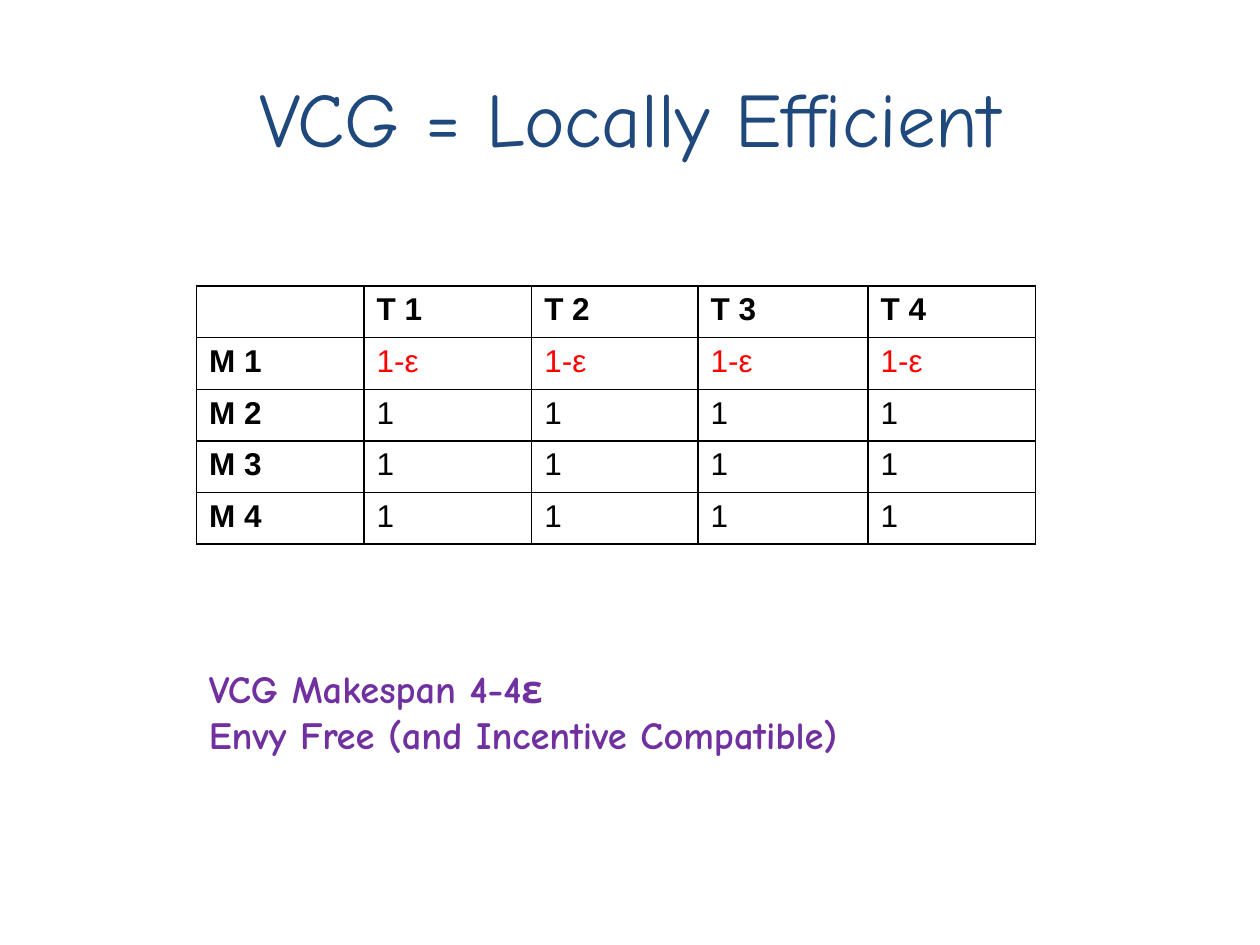
"""Build the slide on VCG as a locally efficient mechanism."""
from lxml import etree
from pptx import Presentation
from pptx.dml.color import RGBColor
from pptx.enum.text import MSO_ANCHOR, PP_ALIGN
from pptx.oxml.ns import qn
from pptx.util import Inches, Pt

CENTER, LEFT = PP_ALIGN.CENTER, PP_ALIGN.LEFT
MIDDLE = MSO_ANCHOR.MIDDLE
NAVY = RGBColor(0x1F, 0x49, 0x7D)
PURPLE = RGBColor(0x70, 0x30, 0xA0)
RED = RGBColor(0xFF, 0x00, 0x00)
BLACK = RGBColor(0x00, 0x00, 0x00)
HEADING_FONT, TABLE_FONT = "Comic Neue", "Arial"

TITLE = "VCG = Locally Efficient"
TASKS = ["T 1", "T 2", "T 3", "T 4"]
MACHINES = {"M 1": "1-ε", "M 2": "1", "M 3": "1", "M 4": "1"}
CHOSEN = "M 1"
CONCLUSIONS = ["VCG Makespan 4-4ε", "Envy Free (and Incentive Compatible)"]
COLUMN_WIDTHS = [1.33, 1.33, 1.32, 1.35, 1.33]
ROW_HEIGHT = 0.41


def write(frame, lines, font, size, color, bold=False, align=LEFT):
    for index, line in enumerate(lines):
        para = frame.paragraphs[0] if index == 0 else frame.add_paragraph()
        para.alignment = align
        span = para.add_run()
        span.text = line
        span.font.name = font
        span.font.size = Pt(size)
        span.font.bold = bold
        span.font.color.rgb = color


def outline(cell):
    properties = cell._tc.get_or_add_tcPr()
    for index, side in enumerate(("a:lnL", "a:lnR", "a:lnT", "a:lnB")):
        line = etree.Element(qn(side), w=str(Pt(1)))
        fill = etree.SubElement(line, qn("a:solidFill"))
        etree.SubElement(fill, qn("a:srgbClr"), val=str(BLACK))
        properties.insert(index, line)


def add_cost_table(page):
    rows = [[""] + TASKS]
    rows += [[machine] + [cost] * len(TASKS) for machine, cost in MACHINES.items()]
    frame = page.shapes.add_table(
        len(rows), len(COLUMN_WIDTHS), Inches(1.56), Inches(2.27),
        Inches(sum(COLUMN_WIDTHS)), Inches(ROW_HEIGHT * len(rows)))
    table = frame.table
    for column, width in zip(table.columns, COLUMN_WIDTHS):
        column.width = Inches(width)
    for r, values in enumerate(rows):
        table.rows[r].height = Inches(ROW_HEIGHT)
        for c, value in enumerate(values):
            cell = table.cell(r, c)
            cell.fill.background()
            outline(cell)
            header = r == 0 or c == 0
            color = RED if values[0] == CHOSEN and not header else BLACK
            if value:
                write(cell.text_frame, [value], font=TABLE_FONT, size=18,
                      color=color, bold=header)


def main():
    deck = Presentation()
    deck.slide_width, deck.slide_height = Inches(10), Inches(7.5)
    page = deck.slides.add_slide(deck.slide_layouts[5])

    title = page.shapes.title
    title.left, title.top = Inches(0.5), Inches(0.3)
    title.width, title.height = Inches(9), Inches(1.25)
    title.text_frame.vertical_anchor = MIDDLE
    write(title.text_frame, [TITLE], font=HEADING_FONT, size=44, color=NAVY,
          align=CENTER)

    box = page.shapes.add_textbox(Inches(1.56), Inches(5.23), Inches(6.02), Inches(0.84))
    box.text_frame.word_wrap = True
    write(box.text_frame, CONCLUSIONS, font=HEADING_FONT, size=22, color=PURPLE,
          bold=True)

    add_cost_table(page)
    deck.save("out.pptx")


if __name__ == "__main__":
    main()
